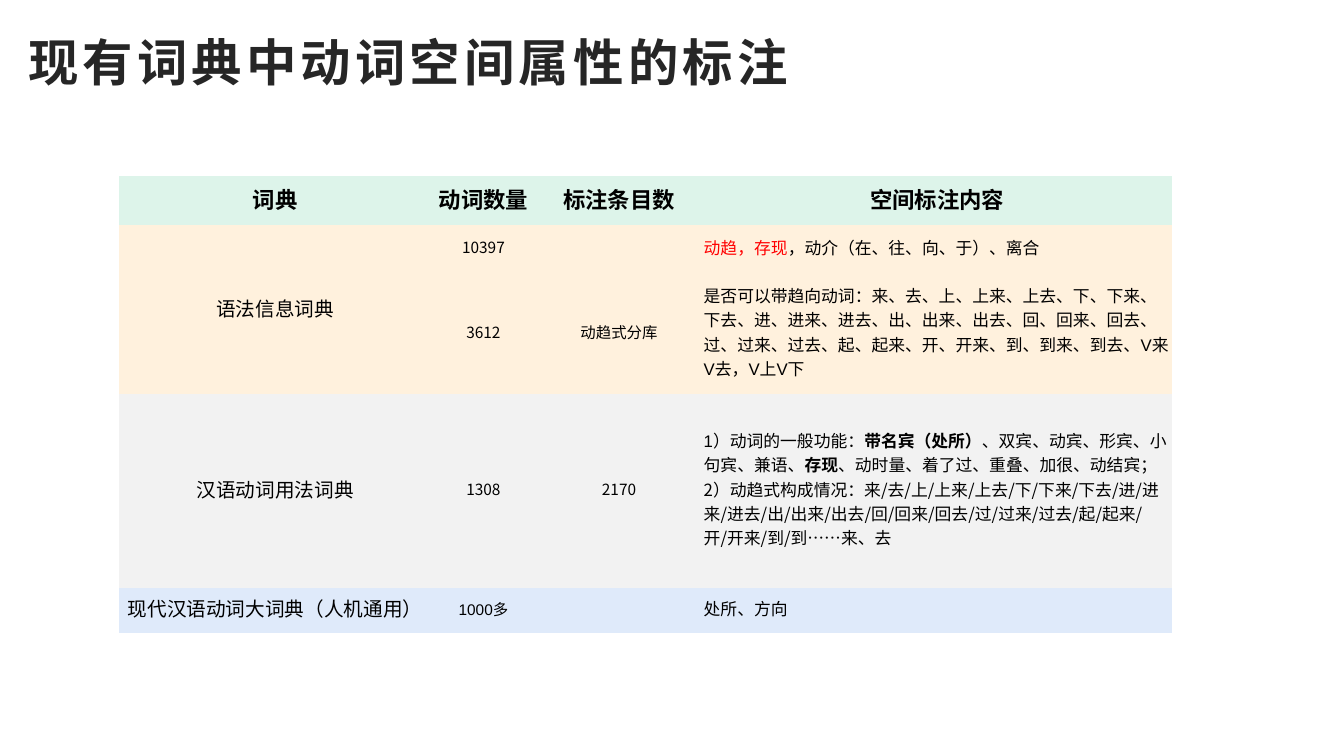
from dataclasses import dataclass
from typing import Optional

from lxml.etree import SubElement
from pptx import Presentation
from pptx.dml.color import RGBColor
from pptx.enum.text import MSO_ANCHOR as Anchor, PP_ALIGN as Align
from pptx.oxml.ns import qn
from pptx.util import Inches, Pt

BLACK = RGBColor(0x00, 0x00, 0x00)
CHARCOAL = RGBColor(0x26, 0x26, 0x26)
RED = RGBColor(0xFF, 0x00, 0x00)
MINT = RGBColor(0xDD, 0xF4, 0xEA)
CREAM = RGBColor(0xFF, 0xF1, 0xDD)
GREY = RGBColor(0xF2, 0xF2, 0xF2)
SKY = RGBColor(0xDF, 0xEA, 0xFA)

ARIAL = "Arial"
NOTO = "Noto Sans CJK SC"

COLUMN_WIDTHS = [3.1, 1.03, 1.66, 4.65]
CELL_FORMAT = {
    "margin_left": Inches(0.01),
    "margin_right": Inches(0.01),
    "margin_top": Inches(0.01),
    "margin_bottom": Inches(0.05),
    "vertical_anchor": Anchor.MIDDLE,
}


@dataclass
class Span:
    text: str
    size: float = 12
    font: str = ARIAL
    color: RGBColor = BLACK
    bold: bool = False


@dataclass
class Entry:
    """A table cell: paragraphs made of spans."""
    paragraphs: list[list[Span]]
    align: Align = Align.CENTER


@dataclass
class Row:
    height: float
    fill: RGBColor
    entries: list[Optional[Entry]]


def heading(text: str) -> Entry:
    return Entry([[Span(text, 16, bold=True)]])


def name(text: str) -> Entry:
    return Entry([[Span(text, 14)]])


def count(text: str, font: str = NOTO) -> Entry:
    return Entry([[Span(text, 11, font)]])


def content(*paragraphs: list[Span]) -> Entry:
    return Entry(list(paragraphs), Align.LEFT)


ROWS = [
    Row(0.48, MINT, [heading(text) for text in
                     ("词典", "动词数量", "标注条目数", "空间标注内容")]),
    Row(0.48, CREAM, [
        name("语法信息词典"), count("10397"), None,
        content([Span("动趋，存现", color=RED),
                 Span("，动介（在、往、向、于）、离合")])]),
    Row(1.2, CREAM, [
        None, count("3612"), count("动趋式分库", ARIAL),
        content([Span("是否可以带趋向动词：来、去、上、上来、上去、下、下来、下去、"
                      "进、进来、进去、出、出来、出去、回、回来、回去、过、过来、过去、"
                      "起、起来、开、开来、到、到来、到去、V来V去，V上V下")])]),
    Row(1.92, GREY, [
        name("汉语动词用法词典"), count("1308"), count("2170"),
        content([Span("1）动词的一般功能："),
                 Span("带名宾（处所）", font=NOTO, bold=True),
                 Span("、双宾、动宾、形宾、小句宾、兼语、", font=NOTO),
                 Span("存现", font=NOTO, bold=True),
                 Span("、动时量、着了过、重叠、加很、动结宾；", font=NOTO)],
                [Span("2）动趋式构成情况：来/去/上/上来/上去/下/下来/下去/"
                      "进/进来/进去/出/出来/出去/回/回来/回去/过/过来/过去/"
                      "起/起来/开/开来/到/到……来、去", font=NOTO)])]),
    Row(0.45, SKY, [
        name("现代汉语动词大词典（人机通用）"), count("1000多", ARIAL), None,
        content([Span("处所、方向")])]),
]


def add_span(para, span: Span):
    run = para.add_run()
    run.text = span.text
    font_format = {"size": Pt(span.size), "name": span.font, "bold": span.bold}
    for attribute, value in font_format.items():
        setattr(run.font, attribute, value)
    run.font.color.rgb = span.color
    # East Asian glyphs need their own typeface entry
    SubElement(run.font._element, qn("a:ea"), typeface=NOTO)
    return run


def fill_cell(cell, entry: Optional[Entry], color: RGBColor) -> None:
    cell.fill.solid()
    cell.fill.fore_color.rgb = color
    for attribute, value in CELL_FORMAT.items():
        setattr(cell, attribute, value)
    if entry is None:
        return
    frame = cell.text_frame
    for index, spans in enumerate(entry.paragraphs):
        para = frame.add_paragraph() if index else frame.paragraphs[0]
        para.alignment = entry.align
        for span in spans:
            add_span(para, span)


def add_title(page, text: str) -> None:
    box = page.shapes.add_textbox(Inches(0.18), Inches(0.22), Inches(12), Inches(0.77))
    frame = box.text_frame
    frame.word_wrap = True
    frame.vertical_anchor = Anchor.MIDDLE
    run = add_span(frame.paragraphs[0], Span(text, 36, color=CHARCOAL, bold=True))
    run.font._element.set("spc", "300")


def add_dictionary_table(page) -> None:
    table = page.shapes.add_table(
        len(ROWS), len(COLUMN_WIDTHS), Inches(1.18), Inches(1.75),
        Inches(sum(COLUMN_WIDTHS)), Inches(sum(row.height for row in ROWS))).table
    table.first_row = False
    table.horz_banding = False
    # Plain style without borders
    style = table._tbl.tblPr.find(qn("a:tableStyleId"))
    style.text = "{2D5ABB26-0587-4C30-8999-92F81FD0307C}"
    for column, width in zip(table.columns, COLUMN_WIDTHS):
        column.width = Inches(width)
    for row_index, row in enumerate(ROWS):
        table.rows[row_index].height = Inches(row.height)
        for column_index, entry in enumerate(row.entries):
            fill_cell(table.cell(row_index, column_index), entry, row.fill)
    # The first dictionary covers two rows
    table.cell(1, 0).merge(table.cell(2, 0))


def main() -> None:
    deck = Presentation()
    deck.slide_width = Inches(13.33)
    deck.slide_height = Inches(7.5)
    page = deck.slides.add_slide(deck.slide_layouts[6])
    add_title(page, "现有词典中动词空间属性的标注")
    add_dictionary_table(page)
    deck.save("out.pptx")


if __name__ == "__main__":
    main()
